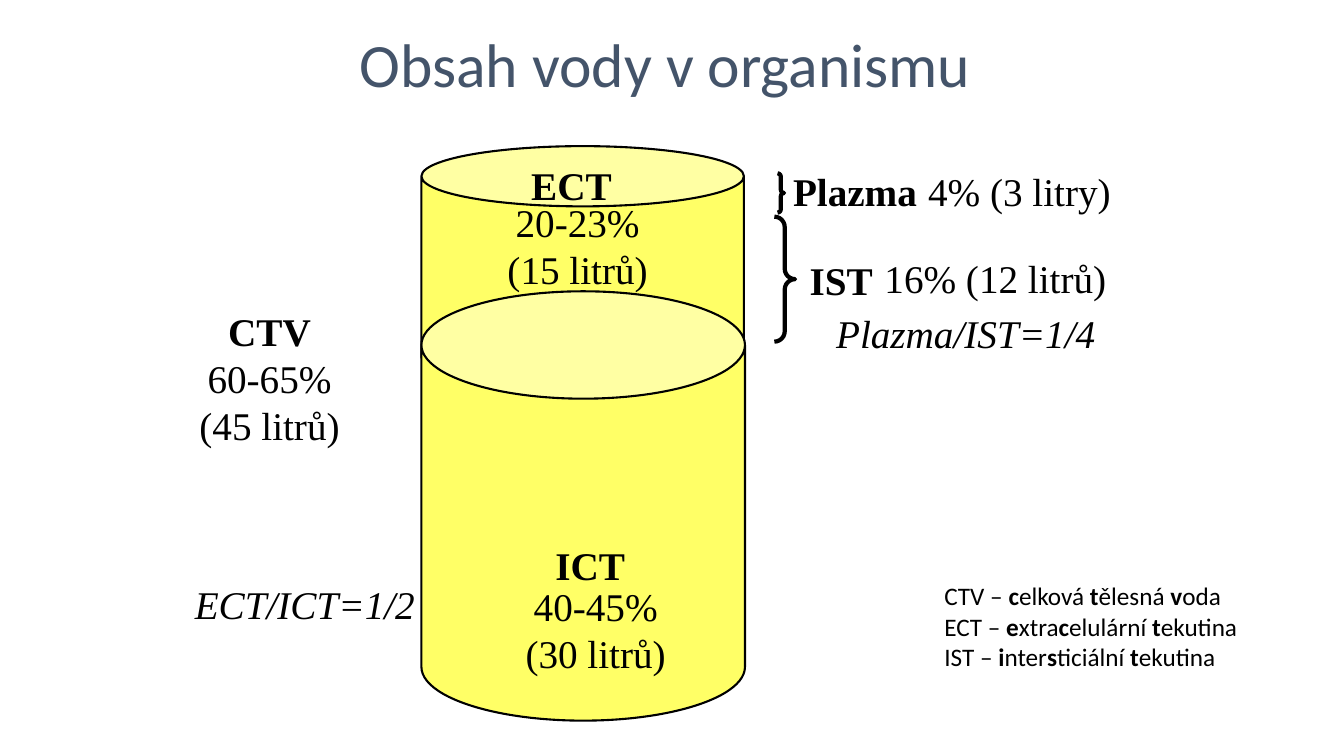
from dataclasses import dataclass

from lxml.etree import SubElement
from pptx import Presentation
from pptx.dml.color import RGBColor
from pptx.enum.shapes import MSO_SHAPE
from pptx.enum.text import MSO_ANCHOR, MSO_AUTO_SIZE, PP_ALIGN
from pptx.oxml.ns import qn
from pptx.slide import Slide
from pptx.text.text import TextFrame
from pptx.util import Pt


@dataclass(frozen=True)
class Theme:
    title_color: RGBColor = RGBColor(0x44, 0x54, 0x6A)
    ink: RGBColor = RGBColor(0, 0, 0)
    water: RGBColor = RGBColor(0xFF, 0xFF, 0x66)
    heading_font: str = "Calibri"
    label_font: str = "Times New Roman"
    title_size: float = 44
    label_size: float = 28
    legend_size: float = 18


@dataclass(frozen=True)
class Box:
    left: float
    top: float
    width: float
    height: float


@dataclass(frozen=True)
class Figure:
    kind: MSO_SHAPE
    box: Box
    adjustment: float
    line_width: float
    filled: bool


@dataclass(frozen=True)
class Label:
    box: Box
    lines: tuple[str, ...]
    bold_first: bool = False
    italic: bool = False
    alignment: PP_ALIGN = PP_ALIGN.CENTER


THEME = Theme()
LINE = 41  # height of a one-line label
PAIR = 74.2  # height of a two-line label

FIGURES = (
    Figure(MSO_SHAPE.DOUBLE_BRACE, Box(311, 154.8, 257, 89.3), 0.083, 3, False),
    Figure(MSO_SHAPE.DOUBLE_BRACE, Box(318.2, 123.8, 241.9, 28.1), 0.083, 3, False),
    Figure(MSO_SHAPE.CAN, Box(301, 104.4, 230.4, 172.1), 0.25, 1.5, True),
    Figure(MSO_SHAPE.CAN, Box(301, 208.1, 231.1, 306.7), 0.332, 1.5, True),
)

LABELS = (
    Label(Box(134.6, 215.3, 115.9, 108.7), ("CTV", "60-65%", "(45 litrů)"), bold_first=True),
    Label(Box(372.2, 111.6, 72, LINE), ("ECT",), bold_first=True),
    Label(Box(355, 138.2, 115.2, PAIR), ("20-23%", "(15 litrů)")),
    Label(Box(389.5, 383, 64.1, LINE), ("ICT",), bold_first=True),
    Label(Box(367.9, 412.6, 115.2, PAIR), ("40-45%", "(30 litrů)")),
    Label(Box(559.4, 115.9, 197.3, LINE), ("Plazma",), bold_first=True, alignment=PP_ALIGN.LEFT),
    Label(Box(655.9, 115.9, 208.8, LINE), ("4% (3 litry)",), alignment=PP_ALIGN.LEFT),
    Label(Box(571, 179.3, 59.8, LINE), ("IST",), bold_first=True),
    Label(Box(624.2, 177.8, 173.5, LINE), ("16% (12 litrů)",)),
    Label(Box(120.2, 411.1, 195.1, LINE), ("ECT/ICT=1/2",), italic=True),
    Label(Box(578.2, 217.4, 223.2, LINE), ("Plazma/IST=1/4",), italic=True),
)

TITLE_BOX = Box(169.2, 0, 612, 90)
LEGEND_BOX = Box(667.4, 411.1, 248.4, 72.7)
# Every second piece is bold
LEGEND = (
    ("CTV – ", "c", "elková ", "t", "ělesná ", "v", "oda"),
    ("ECT – ", "e", "xtra", "c", "elulární ", "t", "ekutina"),
    ("IST – ", "i", "nter", "s", "ticiální ", "t", "ekutina"),
)


def place(shape, box: Box) -> None:
    shape.left, shape.top = Pt(box.left), Pt(box.top)
    shape.width, shape.height = Pt(box.width), Pt(box.height)


def add_run(paragraph, text: str, font: str, size: float, color: RGBColor,
            bold: bool = False, italic: bool = False) -> None:
    run = paragraph.add_run()
    run.text = text
    run.font.name, run.font.size = font, Pt(size)
    run.font.bold, run.font.italic = bold, italic
    run.font.color.rgb = color


def line_paragraph(frame: TextFrame, index: int):
    return frame.add_paragraph() if index else frame.paragraphs[0]


def add_figure(slide: Slide, figure: Figure) -> None:
    box = figure.box
    shape = slide.shapes.add_shape(
        figure.kind, Pt(box.left), Pt(box.top), Pt(box.width), Pt(box.height))
    shape.shadow.inherit = False
    shape.adjustments[0] = figure.adjustment
    shape.line.color.rgb = THEME.ink
    shape.line.width = Pt(figure.line_width)
    if figure.filled:
        shape.fill.solid()
        shape.fill.fore_color.rgb = THEME.water
    else:
        shape.fill.background()


def add_label(slide: Slide, label: Label) -> None:
    box = label.box
    frame = slide.shapes.add_textbox(
        Pt(box.left), Pt(box.top), Pt(box.width), Pt(box.height)).text_frame
    frame.word_wrap = label.alignment == PP_ALIGN.LEFT
    frame.vertical_anchor = MSO_ANCHOR.MIDDLE
    for index, text in enumerate(label.lines):
        paragraph = line_paragraph(frame, index)
        paragraph.alignment = label.alignment
        add_run(paragraph, text, THEME.label_font, THEME.label_size, THEME.ink,
                label.bold_first and index == 0, label.italic)


def fill_title(slide: Slide) -> None:
    title = slide.shapes.title
    place(title, TITLE_BOX)
    frame = title.text_frame
    frame.auto_size = MSO_AUTO_SIZE.NONE
    frame.vertical_anchor = MSO_ANCHOR.MIDDLE
    paragraph = frame.paragraphs[0]
    paragraph.alignment = PP_ALIGN.CENTER
    add_run(paragraph, "Obsah vody v organismu", THEME.heading_font,
            THEME.title_size, THEME.title_color)


def fill_legend(slide: Slide) -> None:
    body = slide.placeholders[1]
    place(body, LEGEND_BOX)
    frame = body.text_frame
    frame.auto_size = MSO_AUTO_SIZE.NONE
    frame.word_wrap = True
    for index, pieces in enumerate(LEGEND):
        paragraph = line_paragraph(frame, index)
        paragraph.space_before = Pt(0)
        # Plain lines without bullet or indent
        properties = paragraph._p.get_or_add_pPr()
        properties.set("marL", "0")
        properties.set("indent", "0")
        SubElement(properties, qn("a:buNone"))
        for position, piece in enumerate(pieces):
            add_run(paragraph, piece, THEME.heading_font, THEME.legend_size,
                    THEME.ink, bold=position % 2 == 1)


def main() -> None:
    presentation = Presentation()
    presentation.slide_width, presentation.slide_height = Pt(960), Pt(540)
    slide = presentation.slides.add_slide(presentation.slide_layouts[1])

    # Title and abbreviations
    fill_title(slide)
    fill_legend(slide)

    # Braces behind the two stacked cylinders
    for figure in FIGURES:
        add_figure(slide, figure)

    # Compartment names, shares and ratios
    for label in LABELS:
        add_label(slide, label)

    presentation.save("out.pptx")


if __name__ == "__main__":
    main()
